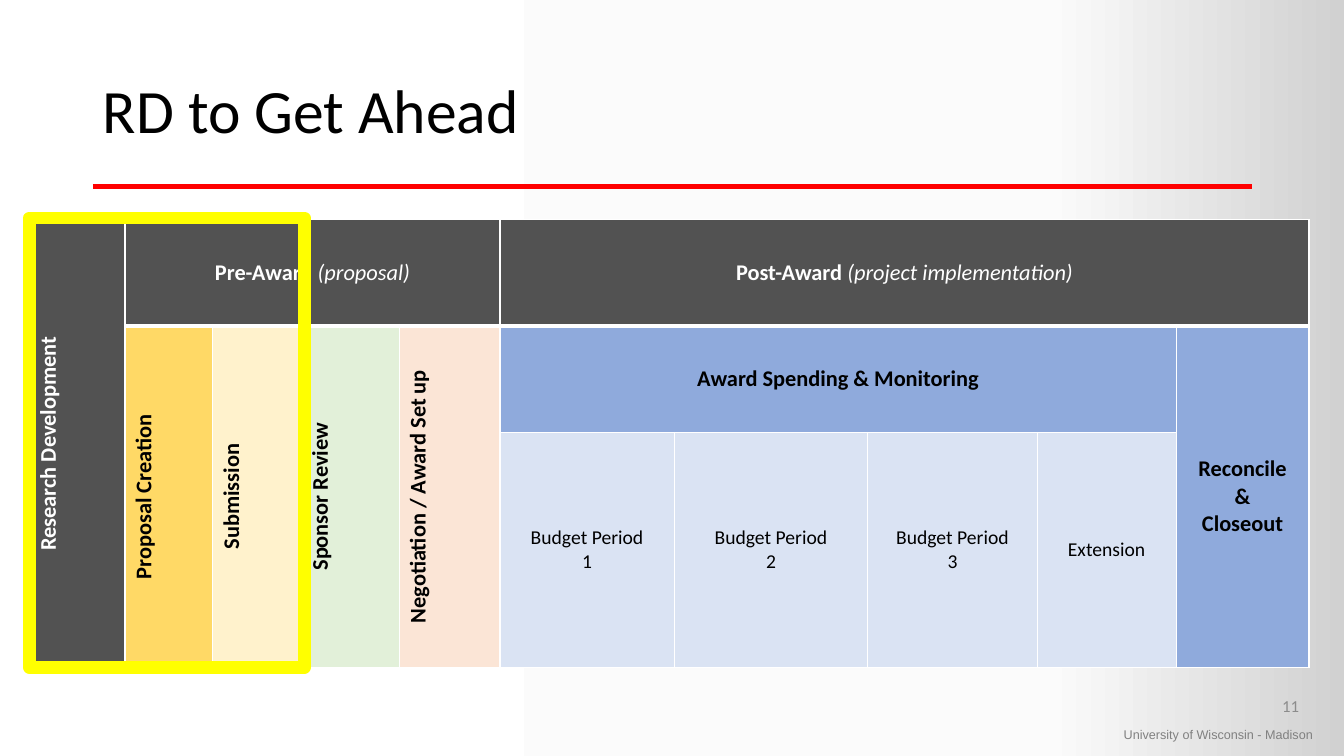
from copy import deepcopy
from dataclasses import dataclass

from lxml.etree import SubElement
from pptx import Presentation
from pptx.dml.color import RGBColor
from pptx.enum.shapes import MSO_CONNECTOR, MSO_SHAPE
from pptx.enum.text import MSO_ANCHOR, PP_ALIGN
from pptx.oxml.ns import qn
from pptx.slide import Slide
from pptx.table import Table, _Cell
from pptx.text.text import Font
from pptx.util import Cm, Pt


@dataclass(frozen=True)
class Theme:
    body_font: str = "Calibri"
    footer_font: str = "Arial"
    black: str = "000000"
    white: str = "FFFFFF"
    dark: str = "525252"
    gold: str = "FFD966"
    cream: str = "FFF2CC"
    green: str = "E2F0D9"
    peach: str = "FBE5D6"
    blue: str = "8FAADC"
    pale_blue: str = "DAE3F3"
    red: str = "FF0000"
    yellow: str = "FFFF00"
    number_grey: str = "8C8C8C"
    footer_grey: str = "808080"
    backdrop: tuple = ((0, "FFFFFF"), (0.78, "FBFBFB"), (1, "D1D1D1"))
    title_size: int = 44
    stage_size: int = 16
    period_size: int = 14
    number_size: int = 12
    footer_size: int = 9
    thin: int = 1
    thick: int = 3
    frame: int = 9


THEME = Theme()


@dataclass(frozen=True)
class Stage:
    row: int
    column: int
    lines: tuple[str, ...]
    fill: str
    rows: int = 1
    columns: int = 1
    note: str = ""
    color: str = THEME.black
    size: int = THEME.stage_size
    bold: bool = True
    vertical: bool = False


@dataclass(frozen=True)
class Label:
    text: str
    left: float
    top: float
    width: float
    height: float
    font: str
    size: int
    color: str
    align: PP_ALIGN
    anchor: MSO_ANCHOR


COLUMN_WIDTHS = (2.41, 2.21, 2.24, 2.46, 2.54, 4.39, 4.88, 4.27, 3.5, 3.35)
ROW_HEIGHTS = (2.67, 2.69, 5.92)

HEADINGS = (
    Stage(0, 0, ("Research Development",), THEME.dark, rows=3,
          color=THEME.white, vertical=True),
    Stage(0, 1, ("Pre-Award ",), THEME.dark, columns=4,
          note="(proposal)", color=THEME.white),
    Stage(0, 5, ("Post-Award ",), THEME.dark, columns=5,
          note="(project implementation)", color=THEME.white),
)
PRE_AWARD = tuple(
    Stage(1, column, (text,), fill, rows=2, vertical=True)
    for column, (text, fill) in enumerate((
        ("Proposal Creation", THEME.gold),
        ("Submission", THEME.cream),
        ("Sponsor Review", THEME.green),
        ("Negotiation / Award Set up", THEME.peach),
    ), start=1)
)
POST_AWARD = (
    Stage(1, 5, ("Award Spending & Monitoring",), THEME.blue, columns=4),
    Stage(1, 9, ("Reconcile", "&", "Closeout"), THEME.blue, rows=2),
)
PERIODS = tuple(
    Stage(2, column, lines, THEME.pale_blue, size=THEME.period_size, bold=False)
    for column, lines in enumerate((
        ("Budget Period", "1"),
        ("Budget Period", "2"),
        ("Budget Period", "3"),
        ("Extension",),
    ), start=5)
)

LABELS = (
    Label("University of Wisconsin - Madison", 28.07, 18.19, 5.6, 0.64,
          THEME.footer_font, THEME.footer_size, THEME.footer_grey,
          PP_ALIGN.LEFT, MSO_ANCHOR.TOP),
    Label("11", 25.37, 17.27, 7.62, 1.02,
          THEME.body_font, THEME.number_size, THEME.number_grey,
          PP_ALIGN.RIGHT, MSO_ANCHOR.MIDDLE),
)


def rgb(value: str) -> RGBColor:
    return RGBColor.from_string(value)


def style_font(font: Font, name: str, size: int, color: str) -> None:
    font.name = name
    font.size = Pt(size)
    font.color.rgb = rgb(color)


def paint_background(page: Slide) -> None:
    fill = page.background.fill
    fill.gradient()
    fill.gradient_angle = 0
    stop_list = next(page.element.iter(qn("a:gsLst")))
    stop_list.append(deepcopy(stop_list[0]))
    for stop, (position, color) in zip(fill.gradient_stops, THEME.backdrop):
        stop.position = position
        stop.color.rgb = rgb(color)


def add_title(page: Slide, text: str) -> None:
    title = page.shapes.title
    title.left, title.top = Cm(2.34), Cm(1.02)
    title.width, title.height = Cm(29.21), Cm(3.68)
    title.text_frame.text = text
    title.text_frame.vertical_anchor = MSO_ANCHOR.MIDDLE
    para = title.text_frame.paragraphs[0]
    para.alignment = PP_ALIGN.LEFT
    para.line_spacing = 0.9
    style_font(para.font, THEME.body_font, THEME.title_size, THEME.black)


def add_title_rule(page: Slide) -> None:
    rule = page.shapes.add_connector(
        MSO_CONNECTOR.STRAIGHT, Cm(2.34), Cm(4.7), Cm(31.55), Cm(4.7))
    rule.line.color.rgb = rgb(THEME.red)
    rule.line.width = Pt(THEME.thick)
    SubElement(rule._element.spPr, qn("a:effectLst"))


def add_label(page: Slide, label: Label) -> None:
    box = page.shapes.add_textbox(
        Cm(label.left), Cm(label.top), Cm(label.width), Cm(label.height))
    frame = box.text_frame
    frame.word_wrap = True
    frame.vertical_anchor = label.anchor
    para = frame.paragraphs[0]
    para.text = label.text
    para.alignment = label.align
    style_font(para.font, label.font, label.size, label.color)


def set_borders(cell: _Cell, row: int) -> None:
    """White cell borders, thick between the heading row and the next one."""
    top = THEME.thick if row == 1 else THEME.thin
    bottom = THEME.thick if row == 0 else THEME.thin
    sides = {"L": THEME.thin, "R": THEME.thin, "T": top, "B": bottom}
    for side, width in sides.items():
        border = SubElement(cell._tc.get_or_add_tcPr(), qn(f"a:ln{side}"), w=str(Pt(width)))
        SubElement(SubElement(border, qn("a:solidFill")), qn("a:srgbClr"), val=THEME.white)


def fill_stage(table: Table, stage: Stage) -> None:
    cell = table.cell(stage.row, stage.column)
    if stage.rows > 1 or stage.columns > 1:
        cell.merge(table.cell(stage.row + stage.rows - 1,
                              stage.column + stage.columns - 1))
    set_borders(cell, stage.row)
    cell.fill.solid()
    cell.fill.fore_color.rgb = rgb(stage.fill)
    cell.vertical_anchor = MSO_ANCHOR.MIDDLE
    if stage.vertical:
        cell._tc.get_or_add_tcPr().set("vert", "vert270")
    cell.text_frame.text = "\n".join(stage.lines)
    for para in cell.text_frame.paragraphs:
        para.alignment = PP_ALIGN.CENTER
        style_font(para.font, THEME.body_font, stage.size, stage.color)
        para.font.bold = stage.bold
        if stage.note:
            span = para.add_run()
            span.text = stage.note
            span.font.bold = False
            span.font.italic = True


def add_lifecycle_table(page: Slide) -> None:
    table = page.shapes.add_table(
        len(ROW_HEIGHTS), len(COLUMN_WIDTHS), Cm(0.74), Cm(5.54),
        Cm(sum(COLUMN_WIDTHS)), Cm(sum(ROW_HEIGHTS))).table
    table.first_row = table.horz_banding = False
    for column, width in zip(table.columns, COLUMN_WIDTHS):
        column.width = Cm(width)
    for row, height in zip(table.rows, ROW_HEIGHTS):
        row.height = Cm(height)
    for stage in HEADINGS + PRE_AWARD + POST_AWARD + PERIODS:
        fill_stage(table, stage)


def add_highlight(page: Slide) -> None:
    highlight = page.shapes.add_shape(
        MSO_SHAPE.RECTANGLE, Cm(0.74), Cm(5.49), Cm(6.93), Cm(11.33))
    highlight.shadow.inherit = False
    highlight.fill.background()
    highlight.line.color.rgb = rgb(THEME.yellow)
    highlight.line.width = Pt(THEME.frame)


def main() -> None:
    deck = Presentation()
    deck.slide_width, deck.slide_height = Cm(33.87), Cm(19.05)
    page = deck.slides.add_slide(deck.slide_layouts.get_by_name("Title Only"))
    paint_background(page)
    add_title(page, "RD to Get Ahead")
    add_title_rule(page)
    for label in LABELS:
        add_label(page, label)
    add_lifecycle_table(page)
    add_highlight(page)
    deck.save("out.pptx")


if __name__ == "__main__":
    main()
